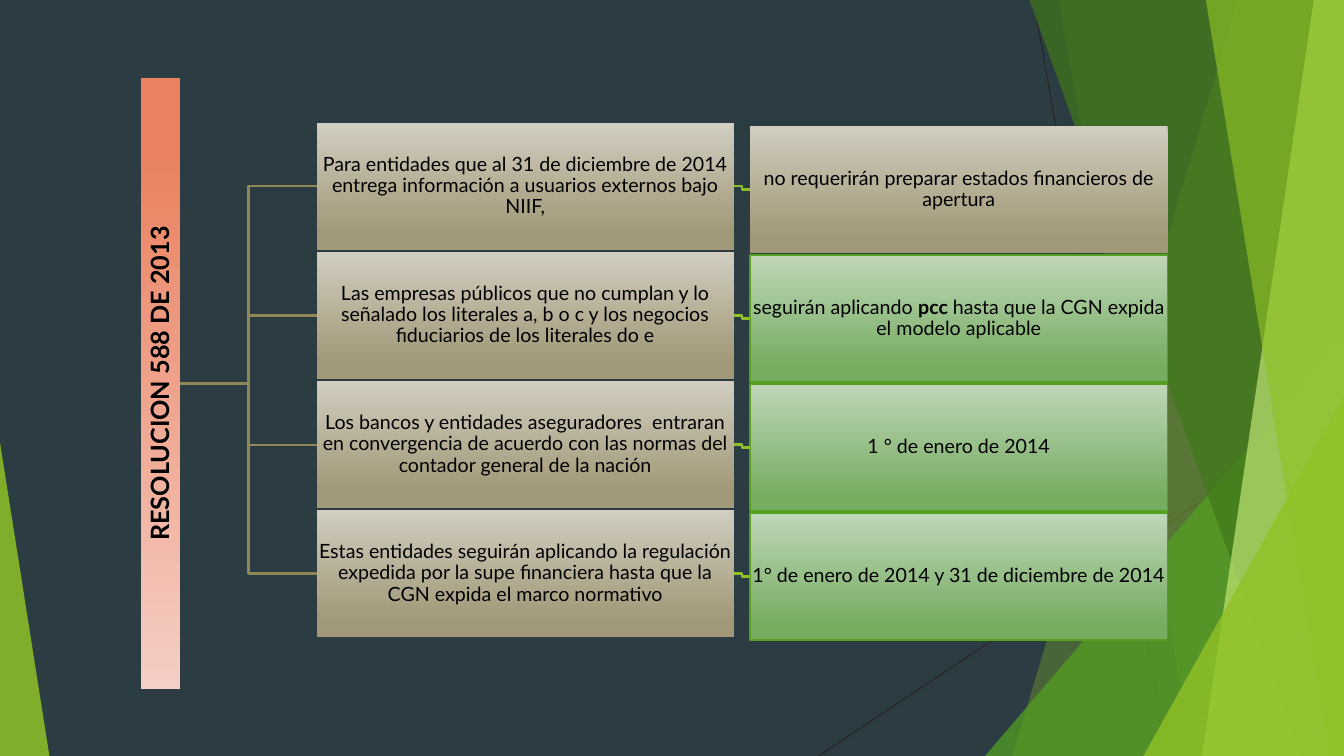
from lxml.etree import SubElement
from pptx import Presentation
from pptx.dml.color import RGBColor
from pptx.enum.shapes import MSO_CONNECTOR as Link, MSO_SHAPE as Preset
from pptx.enum.text import MSO_ANCHOR as Anchor, PP_ALIGN as Align
from pptx.oxml.ns import qn
from pptx.util import Inches, Pt

TITLE = "RESOLUCION 588 DE 2013"
ROWS = [
    ("Para entidades que al 31 de diciembre de 2014 entrega información a usuarios externos bajo NIIF,",
     [("no requerirán preparar estados financieros de apertura", False)], "sand"),
    ("Las empresas públicos que no cumplan y lo señalado los literales a, b o c y los negocios "
     "fiduciarios de los literales do e",
     [("seguirán aplicando ", False), ("pcc ", True),
      ("hasta que la CGN expida el modelo aplicable", False)], "leaf"),
    ("Los bancos y entidades aseguradores  entraran en convergencia de acuerdo con las normas del "
     "contador general de la nación",
     [("1 ° de enero de 2014", False)], "leaf"),
    ("Estas entidades seguirán aplicando la regulación expedida por la supe financiera hasta que la "
     "CGN expida el marco normativo",
     [("1° de enero de 2014 y 31 de diciembre de 2014", False)], "leaf"),
]

COLORS = {
    "night": "2C3C43", "ink": "000000", "thread": "262626", "lime": "90C226",
    "green": "54A021", "forest": "3F7819", "pale": "C0E474", "khaki": "918655",
}
GRADIENTS = {
    "sand": ("D1CDC0", "A19877"),
    "leaf": ("C0D6B9", "76AD61"),
    "coral": ("F5CEC5", "EA815F"),
}
FONT = "Lato"
WIDTH, HEIGHT = 13.33, 7.5
DOWN, UP = 270, 90

THREADS = [((10.25, 0), (11.58, HEIGHT)), ((WIDTH, 4.03), (8.12, HEIGHT))]
FACETS = [
    ("band", (12.28, 10.04), "lime", 30),
    ("band", (10.5, 11.83), "lime", 20),
    ("triangle", (9.77, 3.56, 4.17, 1), "green", 72),
    ("band", (10.21, 12.91), "forest", 70),
    ("band", (13.03, 11.92), "pale", 70),
    ("band", (11.96, 13.18), "lime", 65),
    ("triangle", (11.34, 1.99, 3.57, 1), "lime", 80),
    ("triangle", (0, 0.49, 3.11, 0), "lime", 85),
]

BAR = (1.4, 0.77, 0.39, 6.07)
CELL_WIDTH, CELL_HEIGHT = 4.14, 1.26
ROW_STEP = 1.28
LEFT_ORIGIN = (3.14, 1.22)
RIGHT_ORIGIN = (7.44, 1.25)

deck = Presentation()
deck.slide_width, deck.slide_height = Inches(WIDTH), Inches(HEIGHT)
page = deck.slides.add_slide(deck.slide_layouts[6])
page.background.fill.solid()
page.background.fill.fore_color.rgb = RGBColor.from_string(COLORS["night"])


def draw_connector(kind, start, end, color, weight):
    connector = page.shapes.add_connector(kind, *map(Inches, start + end))
    connector.line.color.rgb = RGBColor.from_string(COLORS[color])
    connector.line.width = Pt(weight)
    SubElement(connector._element.spPr, qn("a:effectLst"))
    return connector


def draw_facet(kind, measures, color, opacity):
    if kind == "band":
        top, bottom = measures
        corners = [(WIDTH, 0), (WIDTH, HEIGHT), (bottom, HEIGHT)]
        builder = page.shapes.build_freeform(Inches(top), 0)
        builder.add_line_segments([(Inches(x), Inches(y)) for x, y in corners])
        facet = builder.convert_to_shape()
    else:
        left, width, height, apex = measures
        facet = page.shapes.add_shape(Preset.ISOSCELES_TRIANGLE, Inches(left),
                                      Inches(HEIGHT - height), Inches(width), Inches(height))
        facet.adjustments[0] = apex
    facet.shadow.inherit = False
    facet.line.fill.background()
    facet.fill.solid()
    facet.fill.fore_color.rgb = RGBColor.from_string(COLORS[color])
    tint = facet._element.spPr.find(qn("a:solidFill"))[0]
    SubElement(tint, qn("a:alpha")).set("val", str(opacity * 1000))


def draw_box(frame, spans, gradient, angle=DOWN, size=14):
    box = page.shapes.add_shape(Preset.RECTANGLE, *map(Inches, frame))
    box.shadow.inherit = False
    box.fill.gradient()
    box.fill.gradient_angle = angle
    for stop, position, tone in zip(box.fill.gradient_stops, (0, 0.88), GRADIENTS[gradient]):
        stop.position = position
        stop.color.rgb = RGBColor.from_string(tone)
    if gradient == "leaf":
        box.line.color.rgb = RGBColor.from_string(COLORS["green"])
        box.line.width = Pt(1)
    else:
        box.line.fill.background()
    text = box.text_frame
    text.word_wrap = True
    text.vertical_anchor = Anchor.MIDDLE
    text.margin_left = text.margin_right = text.margin_top = text.margin_bottom = Inches(0.01)
    para = text.paragraphs[0]
    para.alignment = Align.CENTER
    para.line_spacing = 0.9
    for words, bold in spans:
        span = para.add_run()
        span.text = words
        span.font.name = FONT
        span.font.size = Pt(size)
        span.font.bold = bold
        span.font.color.rgb = RGBColor.from_string(COLORS["ink"])
    return box


def join(source, target, color):
    connector = draw_connector(Link.ELBOW, (0, 0), (1, 1), color, 1.5)
    connector.begin_connect(source, 3)
    connector.end_connect(target, 1)


def cell(origin, row):
    left, top = origin
    return left, top + row * ROW_STEP, CELL_WIDTH, CELL_HEIGHT


for start, end in THREADS:
    draw_connector(Link.STRAIGHT, start, end, "thread", 0.75)
for facet_row in FACETS:
    draw_facet(*facet_row)

bar = draw_box(BAR, [(TITLE, True)], "coral", UP, 18)
bar.text_frame._txBody.bodyPr.set("vert", "vert270")

for row, (condition, outcome, gradient) in enumerate(ROWS):
    condition_box = draw_box(cell(LEFT_ORIGIN, row), [(condition, False)], "sand")
    outcome_box = draw_box(cell(RIGHT_ORIGIN, row), outcome, gradient)
    join(bar, condition_box, "khaki")
    join(condition_box, outcome_box, "lime")

deck.save("out.pptx")
